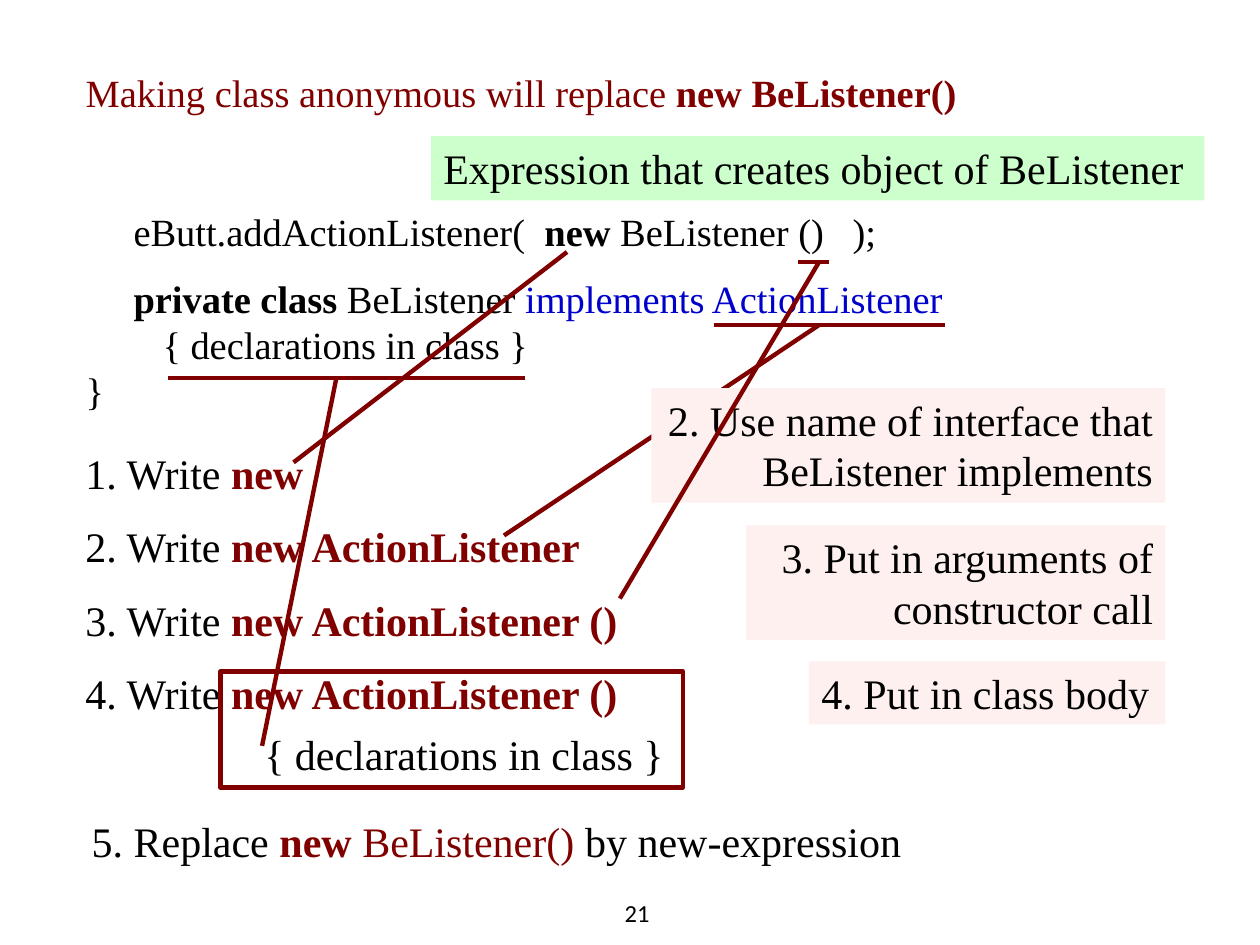
"""Build the slide that turns a named listener class into an anonymous one."""
from pptx import Presentation
from pptx.dml.color import RGBColor
from pptx.enum.shapes import MSO_CONNECTOR, MSO_SHAPE
from pptx.enum.text import MSO_ANCHOR, MSO_AUTO_SIZE, PP_ALIGN
from pptx.oxml.ns import qn
from pptx.util import Inches, Pt
from lxml import etree

LEFT, CENTER, RIGHT = PP_ALIGN.LEFT, PP_ALIGN.CENTER, PP_ALIGN.RIGHT
TOP, BOTTOM = MSO_ANCHOR.TOP, MSO_ANCHOR.BOTTOM
NO_FIT = MSO_AUTO_SIZE.NONE
RECTANGLE, STRAIGHT = MSO_SHAPE.RECTANGLE, MSO_CONNECTOR.STRAIGHT

THEME = {
    "serif": "Times New Roman", "sans": "Calibri",
    "code_size": 22, "step_size": 24, "number_size": 14, "stroke": 2.5,
    "ink": "000000", "maroon": "800000", "blue": "0000CC",
    "green": "CCFFCC", "pink": "FFF0F0",
}

# Each run is (text, colour, bold); each line is (indent, space before, runs).
TITLE = [(0, 0, [("Making class anonymous will replace ", "maroon", False),
                 ("new BeListener()", "maroon", True)])]
CODE = [
    (0.38, 0, [("eButt.addActionListener(  ", "ink", False), ("new ", "ink", True),
               ("BeListener ()   );", "ink", False)]),
    (0.38, 12, [("private class ", "ink", True), ("BeListener ", "ink", False),
                ("implements ActionListener", "blue", False)]),
    (0.61, 0, [("{ declarations in class }", "ink", False)]),
    (0, 0, [("}", "ink", False)]),
]
EXPRESSION = "Expression that creates object of BeListener"
STEPS = [
    {"written": "new", "links": [(4.5, 2, 2.33, 3.67)]},
    {"written": "new ActionListener",
     "links": [(6.5, 2.58, 4, 4.25), (7.5, 2.58, 5.67, 2.58)],
     "note": ("2. Use name of interface that BeListener implements",
              (5.17, 3.08, 4.08, 0.91), RIGHT)},
    {"written": "new ActionListener ()",
     "links": [(6.5, 2.08, 4.92, 4.75), (6.58, 2.08, 6.33, 2.08)],
     "note": ("3. Put in arguments of constructor call",
              (5.92, 4.17, 3.33, 0.91), RIGHT)},
    {"written": "new ActionListener ()", "class_body": "{ declarations in class }",
     "links": [(2.67, 3, 2.08, 5.92), (4.17, 3, 1.33, 3)],
     "note": ("4. Put in class body", (6.42, 5.25, 2.83, 0.5), LEFT)},
]
REPLACE = [("5. Replace ", "ink", False), ("new", "maroon", True),
           (" BeListener() ", "maroon", False), ("by new-expression", "ink", False)]
MARGIN, FIRST_STEP, LAST_STEP = 0.58, 3.5, 5.25
STEP_PITCH = (LAST_STEP - FIRST_STEP) / (len(STEPS) - 1)


def color(name):
    return RGBColor.from_string(THEME[name])


def place(shape, box):
    shape.left, shape.top, shape.width, shape.height = map(Inches, box)


def write(shape, lines, size="step_size", align=LEFT, anchor=TOP, font="serif", wrap=True):
    frame = shape.text_frame
    frame.word_wrap, frame.auto_size = wrap, NO_FIT
    frame.vertical_anchor = anchor
    for index, (indent, before, runs) in enumerate(lines):
        paragraph = frame.add_paragraph() if index else frame.paragraphs[0]
        paragraph.alignment, paragraph.space_before = align, Pt(before)
        properties = paragraph._p.get_or_add_pPr()
        properties.set("marL", str(Inches(indent)))
        properties.set("indent", "0")
        etree.SubElement(properties, qn("a:buNone"))
        for text, ink, bold in runs:
            run = paragraph.add_run()
            run.text = text
            run.font.name, run.font.size = THEME[font], Pt(THEME[size])
            run.font.bold, run.font.color.rgb = bold, color(ink)


def add_text(slide, box, lines, **style):
    write(slide.shapes.add_textbox(*map(Inches, box)), lines, **style)


def add_panel(slide, box, fill=None, line=None):
    panel = slide.shapes.add_shape(RECTANGLE, *map(Inches, box))
    panel.shadow.inherit = False
    if fill:
        panel.fill.solid()
        panel.fill.fore_color.rgb = color(fill)
    else:
        panel.fill.background()
    if line:
        panel.line.color.rgb, panel.line.width = color(line), Pt(THEME["stroke"])
    else:
        panel.line.fill.background()
    return panel


def add_note(slide, text, box, fill, align):
    write(add_panel(slide, box, fill), [(0, 0, [(text, "ink", False)])], align=align)


def add_link(slide, ends):
    link = slide.shapes.add_connector(STRAIGHT, *map(Inches, ends))
    link.line.color.rgb, link.line.width = color("maroon"), Pt(THEME["stroke"])
    etree.SubElement(link._element.spPr, qn("a:effectLst"))


def add_step(slide, index, step):
    lines = [(0, 0, [(f"{index + 1}. Write ", "ink", False),
                     (step["written"], "maroon", True)])]
    height = 0.5
    if "class_body" in step:
        lines.append((1.42, 6, [(step["class_body"], "ink", False)]))
        height = 0.99
    add_text(slide, (MARGIN, FIRST_STEP + index * STEP_PITCH, 5, height), lines)
    for ends in step["links"]:
        add_link(slide, ends)
    if "note" in step:
        text, box, align = step["note"]
        add_note(slide, text, box, "pink", align)


def main():
    deck = Presentation()
    deck.slide_width, deck.slide_height = Inches(10), Inches(7.5)
    slide = deck.slides.add_slide(deck.slide_layouts[1])
    title, code = slide.shapes.title, slide.placeholders[1]
    place(title, (MARGIN, 0.5, 8.92, 0.47))
    write(title, TITLE, size="code_size")
    place(code, (MARGIN, 1.6, 8.92, 1.76))
    write(code, CODE, size="code_size")
    add_text(slide, (4.86, 7.14, 0.26, 0.27), [(0, 0, [("21", "ink", False)])],
             size="number_size", anchor=BOTTOM, font="sans", wrap=False)
    add_note(slide, EXPRESSION, (3.42, 1.08, 6.14, 0.51), "green", LEFT)
    for index, step in enumerate(STEPS):
        add_step(slide, index, step)
    add_text(slide, (0.42, 6.42, 7.04, 0.5), [(0, 0, REPLACE)], align=CENTER)
    add_panel(slide, (1.75, 5.33, 3.67, 0.92), line="maroon")
    deck.save("out.pptx")


if __name__ == "__main__":
    main()
